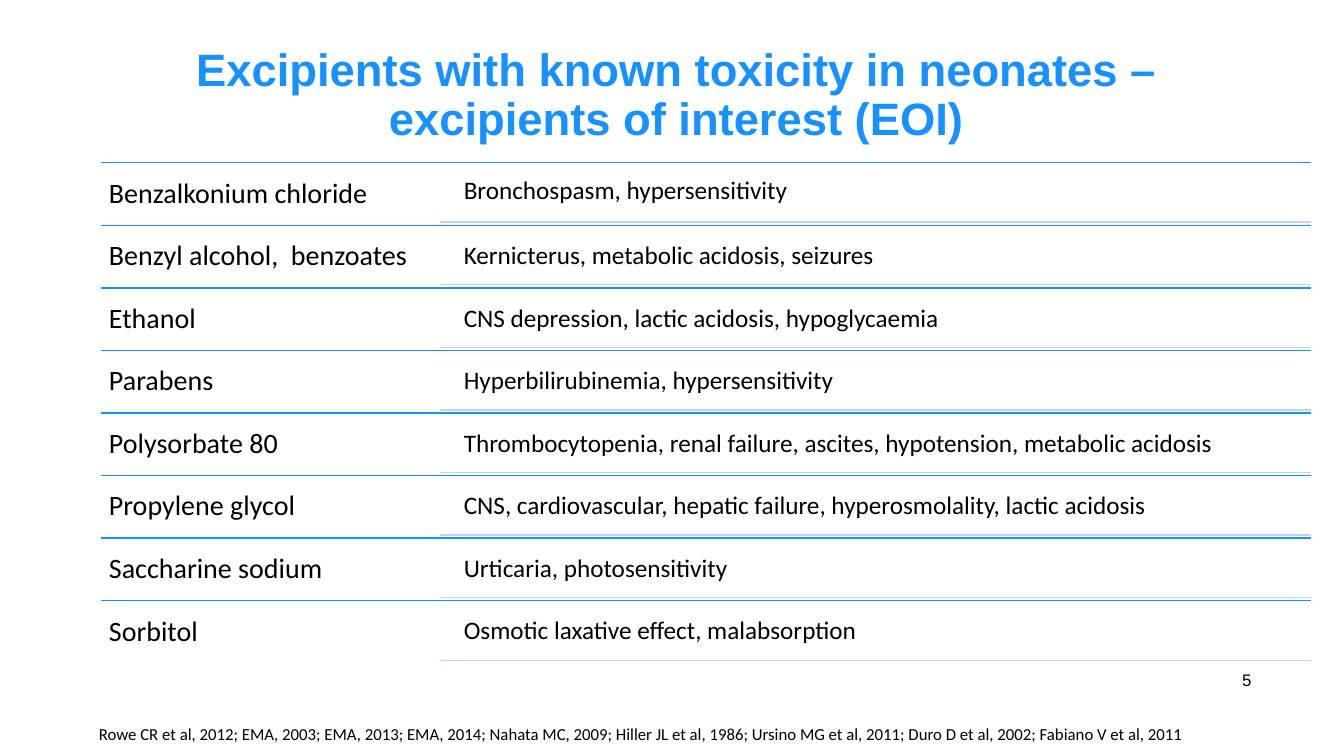
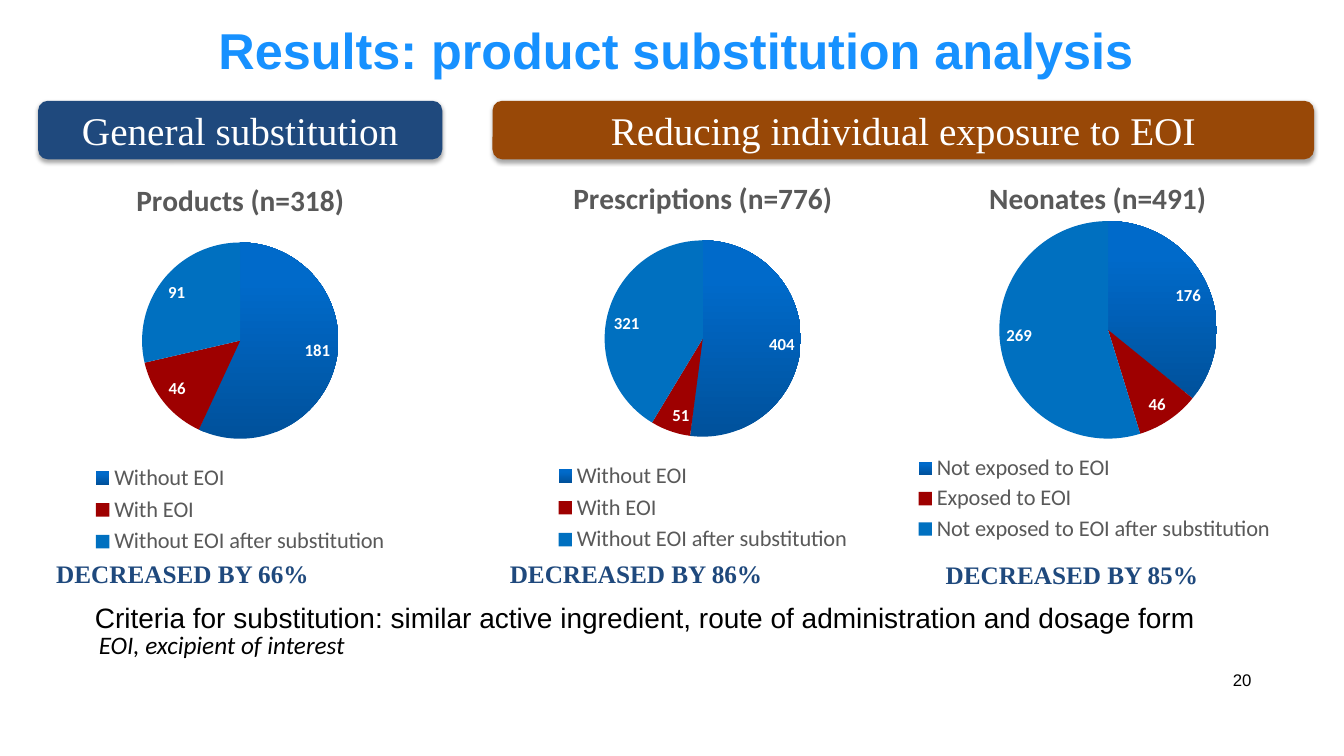
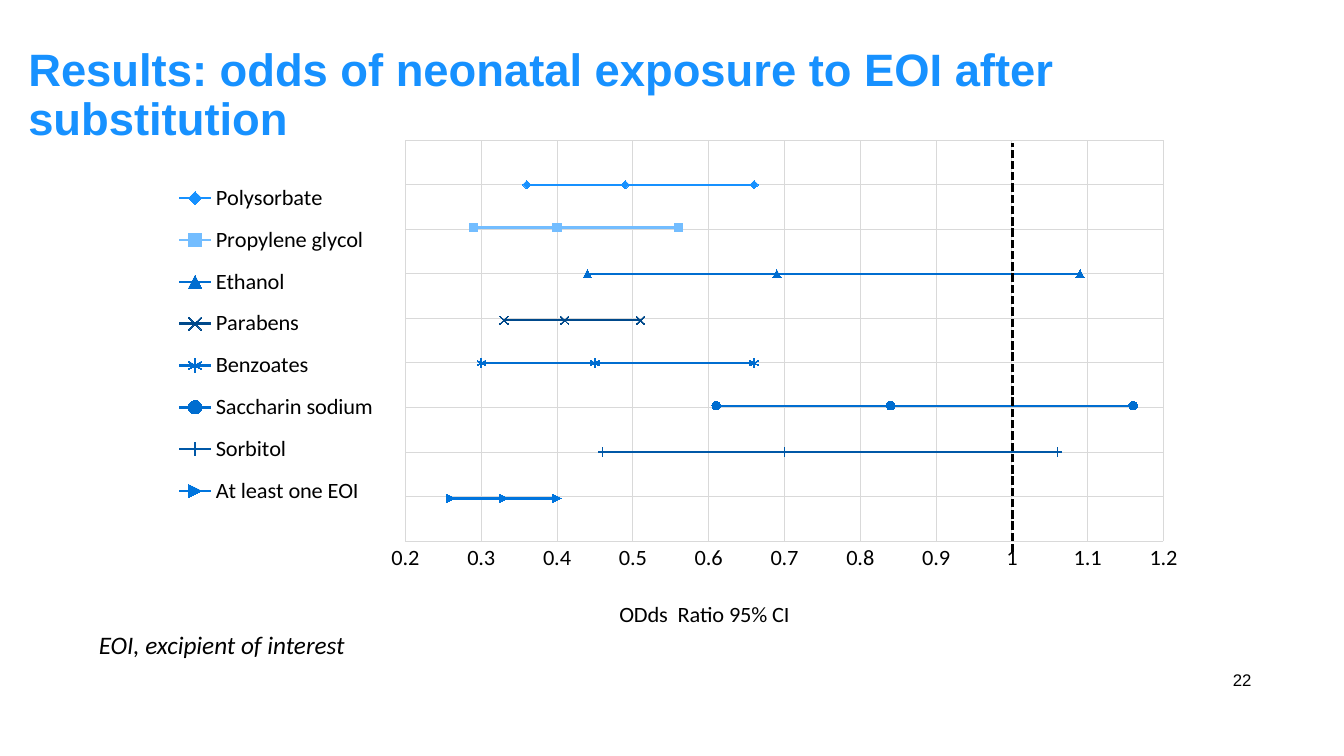
import dataclasses
import typing

import lxml.etree
import pptx
import pptx.chart.chart
import pptx.chart.data
import pptx.dml.color
import pptx.enum.chart
import pptx.enum.dml
import pptx.enum.shapes
import pptx.enum.text
import pptx.oxml.ns
import pptx.slide
import pptx.util

ALIGN = pptx.enum.text.PP_ALIGN
ANCHOR = pptx.enum.text.MSO_ANCHOR
MARKER = pptx.enum.chart.XL_MARKER_STYLE
LEGEND = pptx.enum.chart.XL_LEGEND_POSITION


# Shared look
@dataclasses.dataclass(frozen=True)
class Theme:
    heading: str = "1791FF"
    rule: str = "1791FF"
    soft_rule: str = "BDD2FF"
    black: str = "000000"
    white: str = "FFFFFF"
    navy: str = "1F497D"
    brown: str = "984807"
    gray: str = "595959"
    grid: str = "D9D9D9"
    pie_dark: str = "00519B"
    pie_bright: str = "006ACA"
    pie_red: str = "9E0000"
    pie_blue: str = "0070C0"
    sans: str = "Arial"
    body: str = "Calibri"
    serif: str = "Times New Roman"
    title_size: float = 36
    long_title_size: float = 32.4
    banner_size: float = 28
    chart_title_size: float = 21
    large_size: float = 20
    medium_size: float = 18
    chart_size: float = 16
    small_size: float = 12


THEME = Theme()


class Frame(typing.NamedTuple):
    left: float
    top: float
    width: float
    height: float

    def lengths(self) -> list[pptx.util.Pt]:
        return [pptx.util.Pt(value) for value in self]


class Style(typing.NamedTuple):
    size: float
    font: str = THEME.body
    color: str = THEME.black
    bold: bool = False
    italic: bool = False
    align: ALIGN = ALIGN.LEFT
    anchor: ANCHOR = ANCHOR.TOP
    spacing: float = 1.0
    inset_x: float = 7.2
    inset_y: float = 3.6


class Row(typing.NamedTuple):
    excipient: str
    effects: str


class Banner(typing.NamedTuple):
    text: str
    frame: Frame
    color: str


class Pie(typing.NamedTuple):
    title: str
    frame: Frame
    categories: tuple[str, ...]
    values: tuple[int, ...]
    layouts: dict[str, tuple[float, ...]] = {}


class Odds(typing.NamedTuple):
    name: str
    ratios: tuple[float, float, float]
    color: str
    marker: MARKER
    filled: bool = True


# Content
ROWS = [
    Row("Benzalkonium chloride", "Bronchospasm, hypersensitivity"),
    Row("Benzyl alcohol,  benzoates", "Kernicterus, metabolic acidosis, seizures"),
    Row("Ethanol", "CNS depression, lactic acidosis, hypoglycaemia"),
    Row("Parabens", "Hyperbilirubinemia, hypersensitivity"),
    Row("Polysorbate 80", "Thrombocytopenia, renal failure, ascites, hypotension, metabolic acidosis"),
    Row("Propylene glycol", "CNS, cardiovascular, hepatic failure, hyperosmolality, lactic acidosis"),
    Row("Saccharine sodium", "Urticaria, photosensitivity"),
    Row("Sorbitol", "Osmotic laxative effect, malabsorption"),
]
CITATIONS = (
    "Rowe CR et al, 2012; EMA, 2003; EMA, 2013; EMA, 2014; Nahata MC, 2009; "
    "Hiller JL et al, 1986; Ursino MG et al, 2011; Duro D et al, 2002; Fabiano V et al, 2011"
)
BANNERS = [
    Banner("General substitution", Frame(27.2, 72, 288.7, 41.8), THEME.navy),
    Banner("Reducing individual exposure to EOI", Frame(351.8, 72, 586.8, 41.8), THEME.brown),
]
PRODUCT_GROUPS = ("Without EOI", "With EOI", "Without EOI after substitution")
NEONATE_GROUPS = ("Not exposed to EOI", "Exposed to EOI", "Not exposed to EOI after substitution")
PIES = [
    Pie("Products (n=318)", Frame(21.6, 114.9, 300, 285), PRODUCT_GROUPS, (181, 46, 91)),
    Pie("Prescriptions (n=776)", Frame(352, 113.4, 300, 285), PRODUCT_GROUPS, (404, 51, 321)),
    Pie("Neonates (n=491)", Frame(629.3, 113.4, 309.6, 285), NEONATE_GROUPS, (176, 46, 269),
        {"c:plotArea": (27.3, 15.6, 50.2, 54.6), "c:legend": (6.7, 73.4, 85, 23.6)}),
]
DECREASES = [
    ("DECREASED BY 66%", Frame(33.1, 395.3, 256.3, 28.8), ALIGN.LEFT),
    ("DECREASED BY 86%", Frame(357.1, 395.3, 256.3, 28.8), ALIGN.LEFT),
    ("DECREASED BY 85%", Frame(648, 396, 235.4, 28.8), ALIGN.CENTER),
]
ODDS = [
    Odds("Polysorbate", (0.49, 0.36, 0.66), "1791FF", MARKER.DIAMOND),
    Odds("Propylene glycol", (0.4, 0.29, 0.56), "73BDFF", MARKER.SQUARE),
    Odds("Ethanol", (0.69, 0.44, 1.09), "006DD0", MARKER.TRIANGLE),
    Odds("Parabens", (0.41, 0.33, 0.51), "00498B", MARKER.X, False),
    Odds("Benzoates", (0.45, 0.3, 0.66), "006DD0", MARKER.STAR, False),
    Odds("Saccharin sodium", (0.84, 0.61, 1.16), "006DD0", MARKER.CIRCLE),
    Odds("Sorbitol", (0.7, 0.46, 1.06), "0058A7", MARKER.PLUS, False),
    Odds("At least one EOI", (0.33, 0.26, 0.4), "0075DE", MARKER.DOT),
]
ODDS_STEP = 12.5
ODDS_LAYOUTS = {
    "c:plotArea": (25.5, 1.7, 69.7, 81.4),
    "c:legend": (3.6, 7.7, 20, 71),
    "c:title": (44.8, 94),
}


# Text, lines and shapes
def rgb(color: str) -> pptx.dml.color.RGBColor:
    return pptx.dml.color.RGBColor.from_string(color)


def set_font(font, size: float, color: str, bold: bool = False, name: str = THEME.body) -> None:
    font.size = pptx.util.Pt(size)
    font.name = name
    font.bold = bold
    font.color.rgb = rgb(color)


def write(shape, text: str, style: Style) -> None:
    text_frame = shape.text_frame
    text_frame.word_wrap = True
    text_frame.vertical_anchor = style.anchor
    text_frame.margin_left = text_frame.margin_right = pptx.util.Pt(style.inset_x)
    text_frame.margin_top = text_frame.margin_bottom = pptx.util.Pt(style.inset_y)
    text_frame.text = text
    para = text_frame.paragraphs[0]
    para.alignment = style.align
    para.line_spacing = style.spacing
    for span in para.runs:
        set_font(span.font, style.size, style.color, style.bold, style.font)
        span.font.italic = style.italic


def add_text(page: pptx.slide.Slide, text: str, frame: Frame, style: Style) -> None:
    write(page.shapes.add_textbox(*frame.lengths()), text, style)


def add_line(page: pptx.slide.Slide, start: tuple[float, float], end: tuple[float, float],
             color: str, width: float = 1, dashed: bool = False) -> None:
    points = [pptx.util.Pt(value) for value in (*start, *end)]
    connector = page.shapes.add_connector(pptx.enum.shapes.MSO_CONNECTOR.STRAIGHT, *points)
    connector.line.color.rgb = rgb(color)
    connector.line.width = pptx.util.Pt(width)
    if dashed:
        connector.line.dash_style = pptx.enum.dml.MSO_LINE.SQUARE_DOT
    lxml.etree.SubElement(connector.element.spPr, pptx.oxml.ns.qn("a:effectLst"))


def add_banner(page: pptx.slide.Slide, banner: Banner) -> None:
    shape = page.shapes.add_shape(
        pptx.enum.shapes.MSO_SHAPE.ROUNDED_RECTANGLE, *banner.frame.lengths())
    shape.fill.solid()
    shape.fill.fore_color.rgb = rgb(banner.color)
    shape.line.fill.background()
    shape.shadow.inherit = False
    qn = pptx.oxml.ns.qn
    effects = shape.element.spPr.find(qn("a:effectLst"))
    shadow = lxml.etree.SubElement(
        effects, qn("a:outerShdw"), blurRad=str(pptx.util.Pt(3.1)),
        dist=str(pptx.util.Pt(1.8)), dir="5400000", rotWithShape="0")
    tone = lxml.etree.SubElement(shadow, qn("a:srgbClr"), val=THEME.black)
    lxml.etree.SubElement(tone, qn("a:alpha"), val="35000")
    write(shape, banner.text, Style(THEME.banner_size, THEME.serif, THEME.white,
                                    align=ALIGN.CENTER, anchor=ANCHOR.MIDDLE))


def add_page(deck, number: int, title: str, frame: Frame, size: float = THEME.long_title_size,
             align: ALIGN = ALIGN.CENTER) -> pptx.slide.Slide:
    page = deck.slides.add_slide(deck.slide_layouts[6])
    flush = Style(THEME.small_size, THEME.sans, align=ALIGN.RIGHT, anchor=ANCHOR.MIDDLE,
                  inset_x=0, inset_y=0)
    add_text(page, str(number), Frame(812.5, 470.9, 81.4, 28.8), flush)
    add_text(page, title, frame, flush._replace(
        size=size, color=THEME.heading, bold=True, align=align, spacing=0.9))
    return page


def add_abbreviation(page: pptx.slide.Slide) -> None:
    add_text(page, "EOI, excipient of interest", Frame(63.5, 446.1, 272.2, 28.8),
             Style(THEME.medium_size, italic=True))


# Charts
def set_layouts(chart: pptx.chart.chart.Chart, layouts: dict[str, tuple[float, ...]]) -> None:
    """Place parts of the chart by left, top, width and height in percent."""
    qn = pptx.oxml.ns.qn
    for tag, area in layouts.items():
        target = next(chart.element.iter(qn(tag)))
        for old in target.findall(qn("c:layout")):
            target.remove(old)
        layout = lxml.etree.Element(qn("c:layout"))
        target.insert(0 if tag == "c:plotArea" else 1, layout)
        manual = lxml.etree.SubElement(layout, qn("c:manualLayout"))
        settings = [("layoutTarget", "inner")] if tag == "c:plotArea" else []
        settings += [("xMode", "edge"), ("yMode", "edge")]
        settings += [(name, f"{value / 100:.3f}") for name, value in zip("xywh", area)]
        for name, value in settings:
            lxml.etree.SubElement(manual, qn(f"c:{name}"), val=value)


def add_chart(page: pptx.slide.Slide, kind, frame: Frame, data, legend: LEGEND,
              legend_color: str) -> pptx.chart.chart.Chart:
    chart = page.shapes.add_chart(kind, *frame.lengths(), data).chart
    set_font(chart.font, 10, THEME.black)
    chart.has_legend = True
    chart.legend.position = legend
    chart.legend.include_in_layout = False
    set_font(chart.legend.font, THEME.chart_size, legend_color)
    return chart


def add_pie(page: pptx.slide.Slide, pie: Pie) -> None:
    data = pptx.chart.data.CategoryChartData()
    data.categories = pie.categories
    data.add_series("Series 1", pie.values)
    chart = add_chart(page, pptx.enum.chart.XL_CHART_TYPE.PIE, pie.frame, data,
                      LEGEND.BOTTOM, THEME.gray)
    chart.has_title = True
    title = chart.chart_title
    title.include_in_layout = False
    title.text_frame.text = pie.title
    set_font(title.text_frame.paragraphs[0].runs[0].font, THEME.chart_title_size, THEME.gray, True)
    set_layouts(chart, pie.layouts)

    plot = chart.plots[0]
    plot.vary_by_categories = True
    points = plot.series[0].points
    gradient = points[0].format.fill
    gradient.gradient()
    gradient.gradient_angle = 90
    stops = ((0, THEME.pie_dark), (0.8, THEME.pie_bright))
    for stop, (position, color) in zip(gradient.gradient_stops, stops):
        stop.position = position
        stop.color.rgb = rgb(color)
    for index, color in enumerate((THEME.pie_red, THEME.pie_blue), 1):
        points[index].format.fill.solid()
        points[index].format.fill.fore_color.rgb = rgb(color)

    labels = plot.series[0].data_labels
    labels.show_value = True
    labels.position = pptx.enum.chart.XL_LABEL_POSITION.INSIDE_END
    set_font(labels.font, THEME.small_size, THEME.white, True)


def add_odds_chart(page: pptx.slide.Slide, frame: Frame) -> None:
    data = pptx.chart.data.XyChartData()
    for rank, odds in zip(range(len(ODDS), 0, -1), ODDS):
        series = data.add_series(odds.name)
        for ratio in odds.ratios:
            series.add_data_point(ratio, round(rank * ODDS_STEP))
    chart = add_chart(page, pptx.enum.chart.XL_CHART_TYPE.XY_SCATTER_LINES, frame, data,
                      LEGEND.LEFT, THEME.black)
    chart.has_title = False
    chart.plots[0].vary_by_categories = False

    for series, odds in zip(chart.plots[0].series, ODDS):
        series.smooth = False
        series.format.line.color.rgb = rgb(odds.color)
        series.format.line.width = pptx.util.Pt(1.75)
        marker = series.marker
        marker.style = odds.marker
        marker.size = 6
        marker.format.line.color.rgb = rgb(odds.color)
        if odds.filled:
            marker.format.fill.solid()
            marker.format.fill.fore_color.rgb = rgb(odds.color)
        else:
            marker.format.fill.background()

    ratio_axis, rank_axis = chart.category_axis, chart.value_axis
    scales = ((ratio_axis, 0.2, 1.2, 0.1), (rank_axis, 0, (len(ODDS) + 1) * ODDS_STEP, ODDS_STEP))
    for axis, low, high, step in scales:
        axis.minimum_scale, axis.maximum_scale, axis.major_unit = low, high, step
        axis.has_major_gridlines = True
        axis.major_tick_mark = pptx.enum.chart.XL_TICK_MARK.NONE
        for line in (axis.major_gridlines.format.line, axis.format.line):
            line.color.rgb = rgb(THEME.grid)
            line.width = pptx.util.Pt(0.75)
    rank_axis.visible = False
    set_font(ratio_axis.tick_labels.font, THEME.chart_size, THEME.black)
    ratio_axis.tick_labels.number_format = "General"
    ratio_axis.tick_labels.number_format_is_linked = False
    caption = ratio_axis.axis_title.text_frame
    caption.text = "ODds  Ratio 95% CI"
    set_font(caption.paragraphs[0].runs[0].font, THEME.chart_size, THEME.black)
    set_layouts(chart, ODDS_LAYOUTS)


# Slides
def build_toxicity(deck) -> None:
    page = add_page(deck, 5, "Excipients with known toxicity in neonates – excipients of interest (EOI)",
                    Frame(72, 35.3, 822.2, 67))
    left, right, split, top, pitch = 72, 936.5, 314.5, 116.2, 44.7
    name_style = Style(THEME.large_size, anchor=ANCHOR.MIDDLE, spacing=0.9,
                       inset_x=5.8, inset_y=5.8)
    effect_style = name_style._replace(size=THEME.medium_size, inset_x=5, inset_y=5)
    for index, row in enumerate(ROWS):
        y = top + index * pitch
        effect_top = y + 2 if index else y
        add_line(page, (left, y), (right, y), THEME.rule)
        add_text(page, row.excipient, Frame(left, y, split - left, pitch), name_style)
        add_text(page, row.effects, Frame(326.3, effect_top, 610, 40.3), effect_style)
        add_line(page, (split, y + 42.5), (right, y + 42.5), THEME.soft_rule)
    add_text(page, CITATIONS, Frame(63.5, 513.4, 872.6, 21.6), Style(THEME.small_size))


def build_substitution(deck) -> None:
    page = add_page(deck, 20, "Results: product substitution analysis",
                    Frame(72, 4.3, 822.2, 67), THEME.title_size)
    for banner in BANNERS:
        add_banner(page, banner)
    for pie in PIES:
        add_pie(page, pie)
    for text, frame, align in DECREASES:
        add_text(page, text, frame,
                 Style(THEME.medium_size, THEME.serif, THEME.navy, bold=True, align=align))
    add_text(page, "Criteria for substitution: similar active ingredient, route of administration and dosage form",
             Frame(55.6, 425.5, 810.7, 31.7), Style(THEME.large_size, THEME.sans, align=ALIGN.CENTER))
    add_abbreviation(page)


def build_odds(deck) -> None:
    page = add_page(deck, 22, "Results: odds of neonatal exposure to EOI after substitution",
                    Frame(20.2, 35.3, 919.4, 67), align=ALIGN.LEFT)
    add_odds_chart(page, Frame(91.5, 94.2, 776.9, 359.3))
    add_abbreviation(page)
    add_line(page, (723.2, 394.6), (723.2, 102.2), THEME.black, 2, dashed=True)


def main() -> None:
    deck = pptx.Presentation()
    deck.slide_width = pptx.util.Pt(960)
    deck.slide_height = pptx.util.Pt(540)
    for build in (build_toxicity, build_substitution, build_odds):
        build(deck)
    deck.save("out.pptx")


if __name__ == "__main__":
    main()
